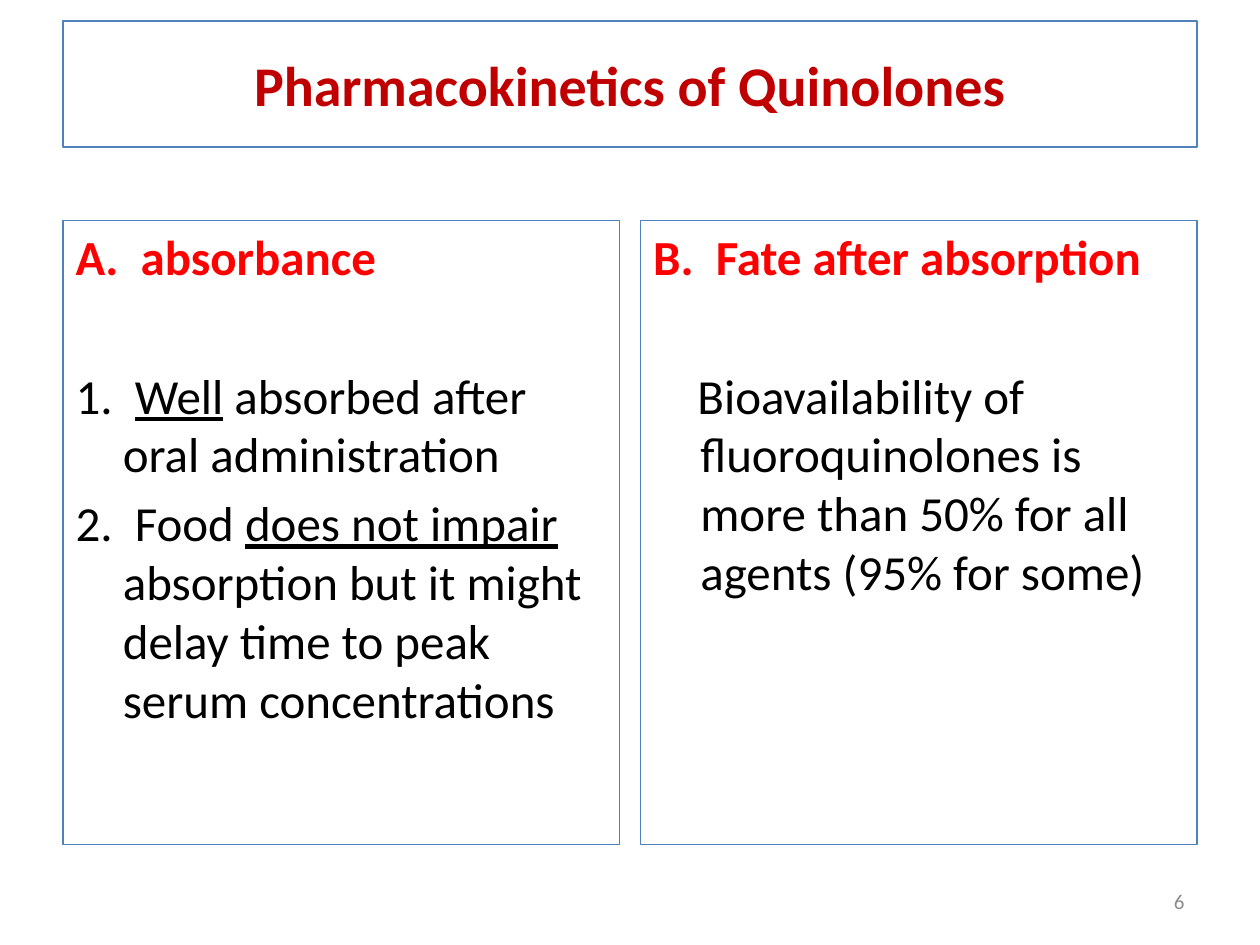
"""Build the slide on the pharmacokinetics of quinolones."""
from lxml.etree import SubElement
from pptx import Presentation
from pptx.dml.color import RGBColor as Rgb
from pptx.enum.text import MSO_ANCHOR as Anchor, MSO_AUTO_SIZE as AutoSize, PP_ALIGN as Align
from pptx.oxml.ns import qn
from pptx.util import Pt

COLORS = {"title": "C00000", "heading": "FF0000", "body": "000000",
          "border": "4F81BD", "number": "8C8C8C"}
FORMATS = {
    "title": {"size": Pt(32), "bold": True},
    "heading": {"size": Pt(28), "bold": True},
    "body": {"size": Pt(28), "bold": False},
    "number": {"size": Pt(12), "bold": False},
}
MARGIN, HANGING, NEAR_FLUSH = 36, 27, 1.7
ITEM_GAP, HEADING_GAP = 5.6, 45.4
PANEL_WIDTH, PANEL_STEP = 318, 330

ABSORBANCE = [
    [("1.  ", False), ("Well", True), (" absorbed after oral administration", False)],
    [("2.  Food ", False), ("does not impair ", True),
     ("absorption but it might delay time to peak serum concentrations", False)],
]
FATE = [
    [("Bioavailability of fluoroquinolones is more than 50% for all agents (95% for some)",
      False)],
]


def place(box, left, top, width, height):
    """Set the position and size of a box in points."""
    bounds = {"left": left, "top": top, "width": width, "height": height}
    for side, length in bounds.items():
        setattr(box, side, Pt(length))


def add_border(box):
    """Draw the thin blue border of a box."""
    box.line.color.rgb = Rgb.from_string(COLORS["border"])
    box.line.width = Pt(0.75)


def set_frame(box, anchor):
    """Wrap the text of a box, keep its size and anchor it."""
    frame_format = {"word_wrap": True, "auto_size": AutoSize.NONE, "vertical_anchor": anchor}
    for name, value in frame_format.items():
        setattr(box.text_frame, name, value)


def add_text(paragraph, words, role, underline=False):
    """Add a run in the format of its role."""
    run = paragraph.add_run()
    run.text = words
    for name, value in {"name": "Calibri", "underline": underline, **FORMATS[role]}.items():
        setattr(run.font, name, value)
    run.font.color.rgb = Rgb.from_string(COLORS[role])


def set_hanging(paragraph, gap, hanging):
    """Give a paragraph its gap above and a hanging indent without bullet."""
    paragraph.space_before = Pt(gap)
    properties = paragraph._p.get_or_add_pPr()
    properties.set("marL", str(Pt(HANGING)))
    properties.set("indent", str(-Pt(hanging)))
    SubElement(properties, qn("a:buNone"))


def fill_title(title, words):
    """Fill the bordered title."""
    place(title, MARGIN, 12, 648, 72)
    add_border(title)
    set_frame(title, Anchor.MIDDLE)
    headline = title.text_frame.paragraphs[0]
    headline.alignment = Align.CENTER
    add_text(headline, words, "title")


def fill_panel(panel, column, heading, points, hanging):
    """Fill a bordered panel with a red heading and its points."""
    place(panel, MARGIN + column * PANEL_STEP, 126, PANEL_WIDTH, 356.4)
    add_border(panel)
    set_frame(panel, Anchor.TOP)
    heading_line = panel.text_frame.paragraphs[0]
    set_hanging(heading_line, ITEM_GAP, HANGING)
    add_text(heading_line, heading, "heading")
    for index, point in enumerate(points):
        point_line = panel.text_frame.add_paragraph()
        set_hanging(point_line, ITEM_GAP if index else HEADING_GAP, hanging)
        for words, underline in point:
            add_text(point_line, words, "body", underline)


def add_page_number(slide, number):
    """Add the grey page number at the bottom right."""
    number_box = slide.shapes.add_textbox(Pt(516), Pt(500.5), Pt(168), Pt(28.75))
    set_frame(number_box, Anchor.MIDDLE)
    number_line = number_box.text_frame.paragraphs[0]
    number_line.alignment = Align.RIGHT
    add_text(number_line, number, "number")


def main():
    """Build and save the slide."""
    deck = Presentation()
    deck.slide_width, deck.slide_height = Pt(720), Pt(540)
    slide = deck.slides.add_slide(deck.slide_layouts[3])
    title, absorbance, fate = slide.placeholders
    fill_title(title, "Pharmacokinetics of Quinolones")
    fill_panel(absorbance, 0, "A.  absorbance", ABSORBANCE, HANGING)
    fill_panel(fate, 1, "B.  Fate after absorption", FATE, NEAR_FLUSH)
    add_page_number(slide, "6")
    deck.save("out.pptx")


if __name__ == "__main__":
    main()
